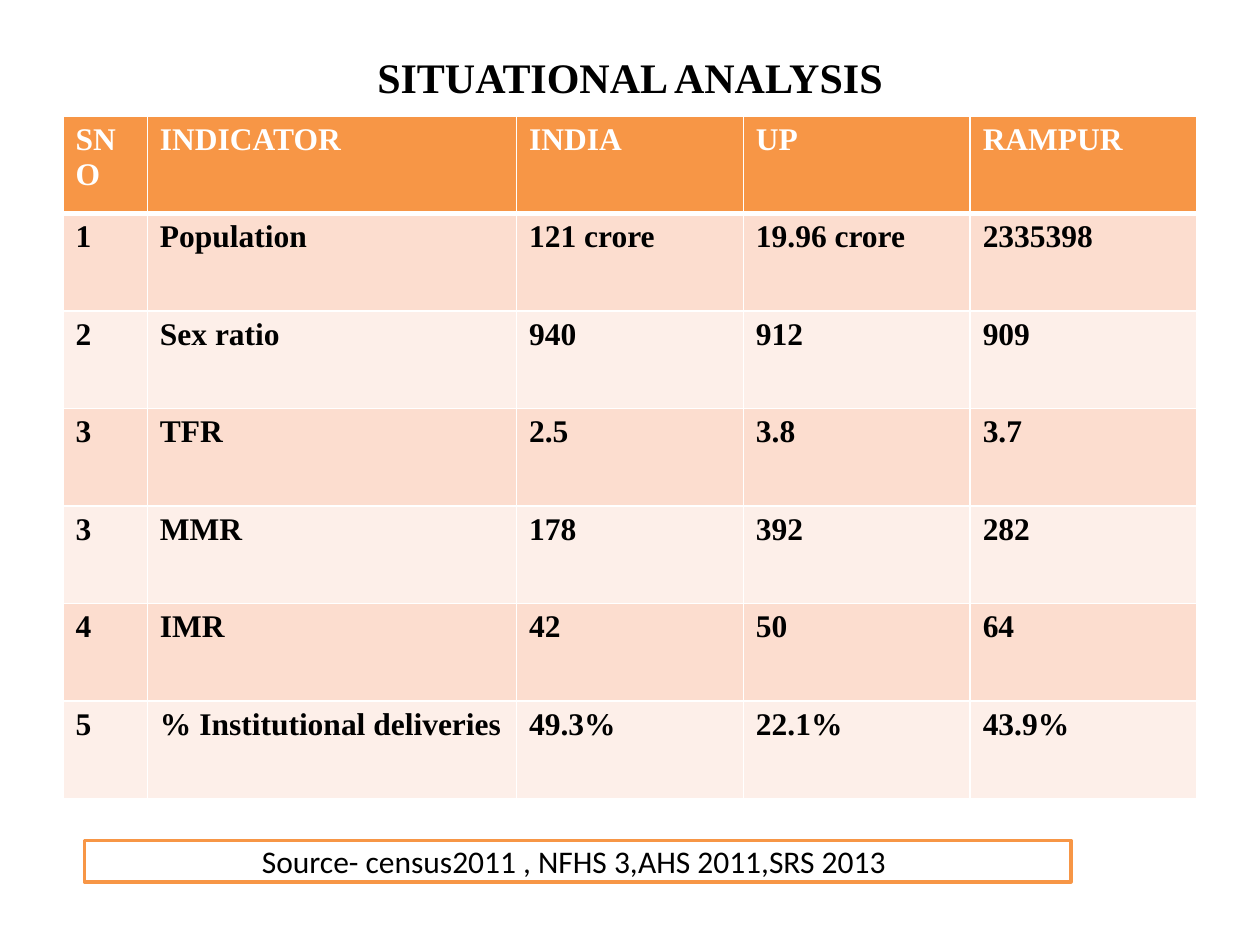
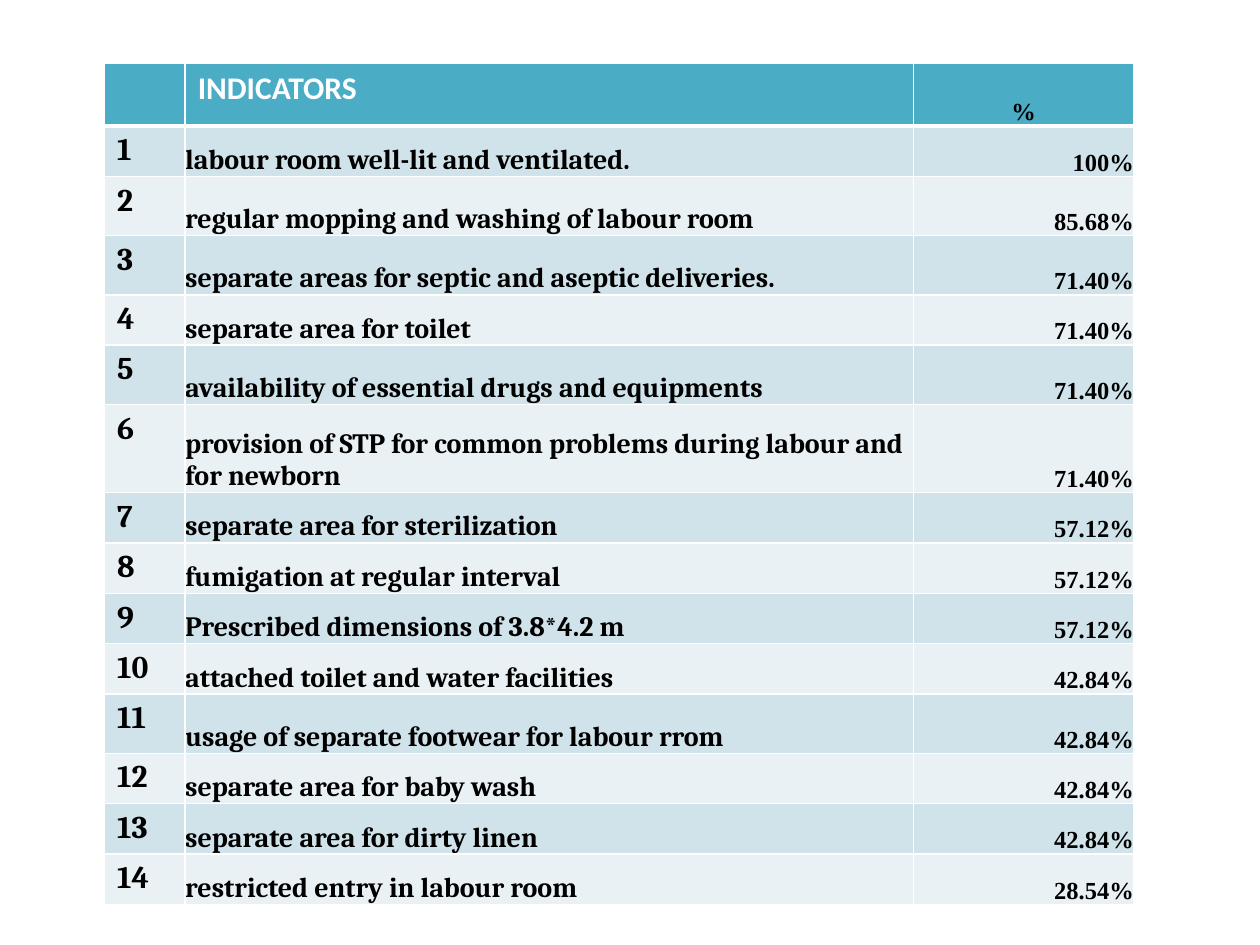
"""Two slides of maternal health indicators: district situation and labour room audit."""
from lxml import etree
from pptx import Presentation, util as u
from pptx.dml.color import RGBColor
from pptx.enum import shapes, text
from pptx.oxml import ns

THEME = {
    "black": RGBColor(0, 0, 0),
    "white": RGBColor(255, 255, 255),
    "orange": [RGBColor.from_string(c) for c in ("F79646", "FCDDCF", "FDEFE9")],
    "teal": [RGBColor.from_string(c) for c in ("4BACC6", "D0E3EA", "E9F1F5")],
    "serif": "Times New Roman", "sans": "Calibri", "book": "Cambria",
    "title": u.Pt(24), "body": u.Pt(18), "item": u.Pt(16), "share": u.Pt(14),
}
LEFT, CENTER, RIGHT = text.PP_ALIGN.LEFT, text.PP_ALIGN.CENTER, text.PP_ALIGN.RIGHT
TIGHT = {"vertical_anchor": text.MSO_ANCHOR.BOTTOM, "margin_left": 0,
         "margin_top": 0, "margin_right": 0, "margin_bottom": 0}


def write(frame, words, face, size, color, align=LEFT, bold=True):
    """Put one formatted paragraph in a text frame."""
    paragraph = frame.paragraphs[0]
    paragraph.alignment = align
    run = paragraph.add_run()
    run.text = words
    for name, value in {"name": THEME[face], "size": THEME[size], "bold": bold}.items():
        setattr(run.font, name, value)
    run.font.color.rgb = THEME[color]


def build_table(slide, place, widths, heights, palette):
    """Add a banded table with white rules and a thick rule under its header."""
    table = slide.shapes.add_table(len(heights), len(widths), *map(u.Inches, place)).table
    for column, width in zip(table.columns, widths):
        column.width = u.Inches(width)
    for r, (row, height) in enumerate(zip(table.rows, heights)):
        row.height = u.Inches(height)
        for cell in row.cells:
            properties = cell._tc.get_or_add_tcPr()
            for side in "LRTB":
                thick = (r == 0 and side == "B") or (r == 1 and side == "T")
                rule = etree.SubElement(properties, ns.qn(f"a:ln{side}"),
                                        w=str(u.Pt(3 if thick else 1)))
                paint = etree.SubElement(rule, ns.qn("a:solidFill"))
                etree.SubElement(paint, ns.qn("a:srgbClr"), val=str(THEME["white"]))
            cell.fill.solid()
            cell.fill.fore_color.rgb = palette[0 if r == 0 else 2 - r % 2]
    return table


deck = Presentation()
deck.slide_width, deck.slide_height = u.Inches(10), u.Inches(7.5)

situation = deck.slides.add_slide(deck.slide_layouts[5])
heading = situation.shapes.title
for name, value in {"left": 0.5, "top": 0.3, "width": 9, "height": 0.62}.items():
    setattr(heading, name, u.Inches(value))
heading.text_frame.vertical_anchor = text.MSO_ANCHOR.MIDDLE
write(heading.text_frame, "SITUATIONAL ANALYSIS", "serif", "title", "black", CENTER)

regions = [
    ("SNO", "INDICATOR", "INDIA", "UP", "RAMPUR"),
    ("1", "Population", "121 crore", "19.96 crore", "2335398"),
    ("2", "Sex ratio", "940", "912", "909"),
    ("3", "TFR", "2.5", "3.8", "3.7"),
    ("3", "MMR", "178", "392", "282"),
    ("4", "IMR", "42", "50", "64"),
    ("5", "% Institutional deliveries", "49.3%", "22.1%", "43.9%"),
]
comparison = build_table(situation, (0.5, 0.92, 9, 5.42), [0.67, 2.93] + [1.8] * 3,
                         [5.42 / len(regions)] * len(regions), THEME["orange"])
for r, region_row in enumerate(regions):
    for c, words in enumerate(region_row):
        write(comparison.cell(r, c).text_frame, words, "serif", "body",
              "black" if r else "white")

source = situation.shapes.add_shape(shapes.MSO_SHAPE.RECTANGLE,
                                    *map(u.Inches, (0.67, 6.67, 7.83, 0.33)))
source.shadow.inherit = False
source.fill.solid()
source.fill.fore_color.rgb = THEME["white"]
source.line.color.rgb = THEME["orange"][0]
source.line.width = u.Pt(2)
source.text_frame.vertical_anchor = text.MSO_ANCHOR.MIDDLE
write(source.text_frame, "Source- census2011 , NFHS 3,AHS 2011,SRS 2013 ",
      "sans", "body", "black", CENTER, bold=False)

audit = deck.slides.add_slide(deck.slide_layouts[6])
facilities = [
    ("labour room well-lit and ventilated.", "100%", 0.4),
    ("regular mopping and washing of labour room", "85.68%", 0.47),
    ("separate areas for septic and aseptic deliveries.", "71.40%", 0.47),
    ("separate area for toilet", "71.40%", 0.4),
    ("availability of essential drugs and equipments", "71.40%", 0.47),
    ("provision of STP for common problems during labour and for newborn", "71.40%", 0.7),
    ("separate area for sterilization", "57.12%", 0.4),
    ("fumigation at regular interval", "57.12%", 0.4),
    ("Prescribed dimensions of 3.8*4.2 m", "57.12%", 0.4),
    ("attached toilet and water facilities", "42.84%", 0.4),
    ("usage of separate footwear for labour rrom", "42.84%", 0.47),
    ("separate area for baby wash", "42.84%", 0.4),
    ("separate area for dirty linen", "42.84%", 0.4),
    ("restricted entry in labour room", "28.54%", 0.4),
]
checklist = build_table(audit, (0.83, 0.5, 8.17, 6.67), [0.64, 5.78, 1.75],
                        [0.5] + [height for *_, height in facilities], THEME["teal"])
write(checklist.cell(0, 1).text_frame, "INDICATORS", "sans", "body", "white")
write(checklist.cell(0, 2).text_frame, "%", "serif", "share", "black", CENTER)
for r, (facility, share, _) in enumerate(facilities, 1):
    number_cell, facility_cell, share_cell = checklist.rows[r].cells
    write(number_cell.text_frame, str(r), "book", "body", "black")
    write(facility_cell.text_frame, facility, "book", "item", "black")
    write(share_cell.text_frame, share, "serif", "share", "black", RIGHT)
for r in range(len(facilities) + 1):
    for c in (1, 2) if r else (2,):
        for name, value in TIGHT.items():
            setattr(checklist.cell(r, c), name, value)

deck.save("out.pptx")
